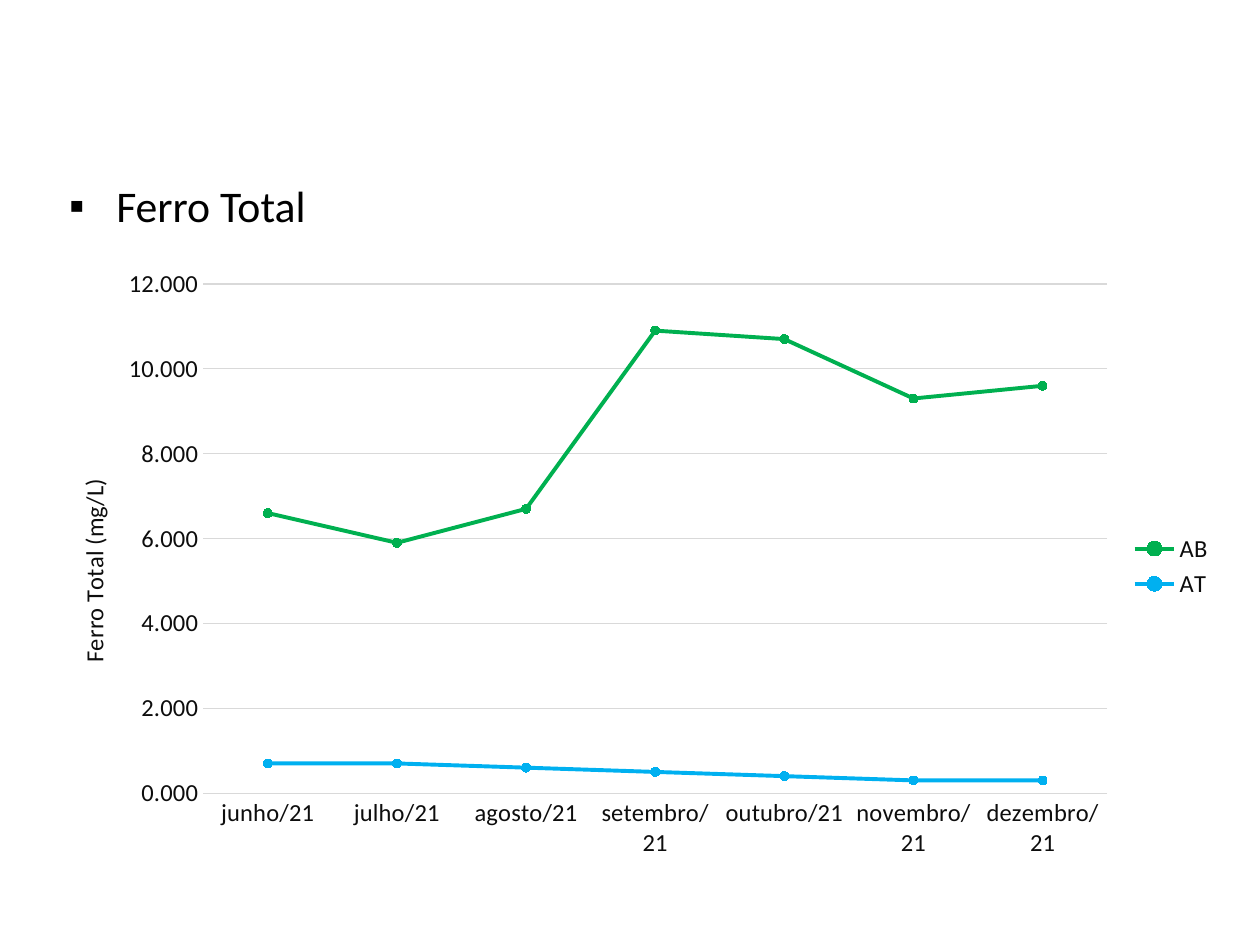
from lxml import etree
from pptx import Presentation
from pptx.chart.data import CategoryChartData
from pptx.dml.color import RGBColor
from pptx.enum.chart import XL_CHART_TYPE, XL_LEGEND_POSITION, XL_MARKER_STYLE, XL_TICK_MARK
from pptx.enum.text import MSO_ANCHOR, PP_ALIGN
from pptx.oxml import parse_xml
from pptx.oxml.ns import nsdecls, qn
from pptx.util import Cm, Pt

LINE = XL_CHART_TYPE.LINE_MARKERS
RIGHT = XL_LEGEND_POSITION.RIGHT
CIRCLE = XL_MARKER_STYLE.CIRCLE
NO_TICK = XL_TICK_MARK.NONE
TOP = MSO_ANCHOR.TOP
LEFT = PP_ALIGN.LEFT

COLORS = {"black": "000000", "text": "0D0D0D", "grid": "D9D9D9",
          "AB": "00B050", "AT": "00B0F0"}
FACE = "Calibri"


def style(font, size, name):
    font.name = FACE
    font.size = Pt(size)
    font.bold = False
    font.color.rgb = RGBColor.from_string(COLORS[name])


def layout(**parts):
    """Manual chart layout, in fractions of the chart size."""
    inner = '<c:layoutTarget val="inner"/>' if "w" in parts else ""
    modes = "".join(f'<c:{k}Mode val="edge"/>' for k in parts if k in "xy")
    sizes = "".join(f'<c:{k} val="{v}"/>' for k, v in parts.items())
    return parse_xml(f'<c:layout {nsdecls("c")}><c:manualLayout>'
                     f'{inner}{modes}{sizes}</c:manualLayout></c:layout>')


prs = Presentation()
prs.slide_width, prs.slide_height = Cm(25.4), Cm(19.05)
slide = prs.slides.add_slide(prs.slide_layouts[5])

# Bulleted title
title = slide.shapes.title
title.left, title.top, title.width, title.height = Cm(1.14), Cm(3.48), Cm(6.32), Cm(1.32)
frame = title.text_frame
frame.text = "Ferro Total"
frame.vertical_anchor = TOP
para = frame.paragraphs[0]
para.alignment = LEFT
props = para._p.get_or_add_pPr()
props.set("marL", str(Cm(0.95)))
props.set("indent", str(Cm(-0.95)))
etree.SubElement(props, qn("a:buFont")).set("typeface", "Arial")
etree.SubElement(props, qn("a:buChar")).set("char", "▪")
style(para.runs[0].font, 25, "black")

# Chart data
data = CategoryChartData(number_format="0.000")
months = ["junho", "julho", "agosto", "setembro", "outubro", "novembro", "dezembro"]
data.categories = [f"{month}/21" for month in months]
data.add_series("AB", [6.6, 5.9, 6.7, 10.9, 10.7, 9.3, 9.6])
data.add_series("AT", [0.7, 0.7, 0.6, 0.5, 0.4, 0.3, 0.3])

# Line chart
chart = slide.shapes.add_chart(
    LINE, Cm(0.74), Cm(5.23), Cm(23.98), Cm(12.37), data).chart
style(chart.font, 14, "text")
chart.has_title = False
chart.has_legend = True
chart.legend.position = RIGHT
chart.legend.include_in_layout = False
style(chart.legend.font, 14, "text")

plot = chart.plots[0]
plot.vary_by_categories = False
area = chart._chartSpace.chart.plotArea
for old in area.findall(qn("c:layout")):
    area.remove(old)
area.insert(0, layout(x=0.14, y=0.04, w=0.76, h=0.83))

for line in plot.series:
    color = RGBColor.from_string(COLORS[line.name])
    line.smooth = False
    line.format.line.color.rgb = color
    line.format.line.width = Pt(2.25)
    mark = line.marker
    mark.style, mark.size = CIRCLE, 5
    mark.format.fill.solid()
    mark.format.fill.fore_color.rgb = color
    mark.format.line.color.rgb = color

# Axes
cats, vals = chart.category_axis, chart.value_axis
for axis in (cats, vals):
    axis.major_tick_mark = axis.minor_tick_mark = NO_TICK
    style(axis.tick_labels.font, 14, "text")
vals.minimum_scale, vals.maximum_scale, vals.major_unit = 0, 12, 2
vals.tick_labels.number_format = "0.000"
vals.tick_labels.number_format_is_linked = False
vals.has_major_gridlines = True
for rule in (cats.format.line, vals.major_gridlines.format.line):
    rule.color.rgb = RGBColor.from_string(COLORS["grid"])
    rule.width = Pt(0.75)
vals.format.line.fill.background()

# Value axis title
label = vals.axis_title
label.text_frame.text = "Ferro Total (mg/L)"
style(label.text_frame.paragraphs[0].runs[0].font, 14, "text")
body = label.text_frame._txBody.find(qn("a:bodyPr"))
body.set("rot", "-5400000")
body.set("vert", "horz")
node = label._element
for old in node.findall(qn("c:layout")):
    node.remove(old)
node.find(qn("c:tx")).addnext(layout(x=0.03, y=0.35))

prs.save("out.pptx")
